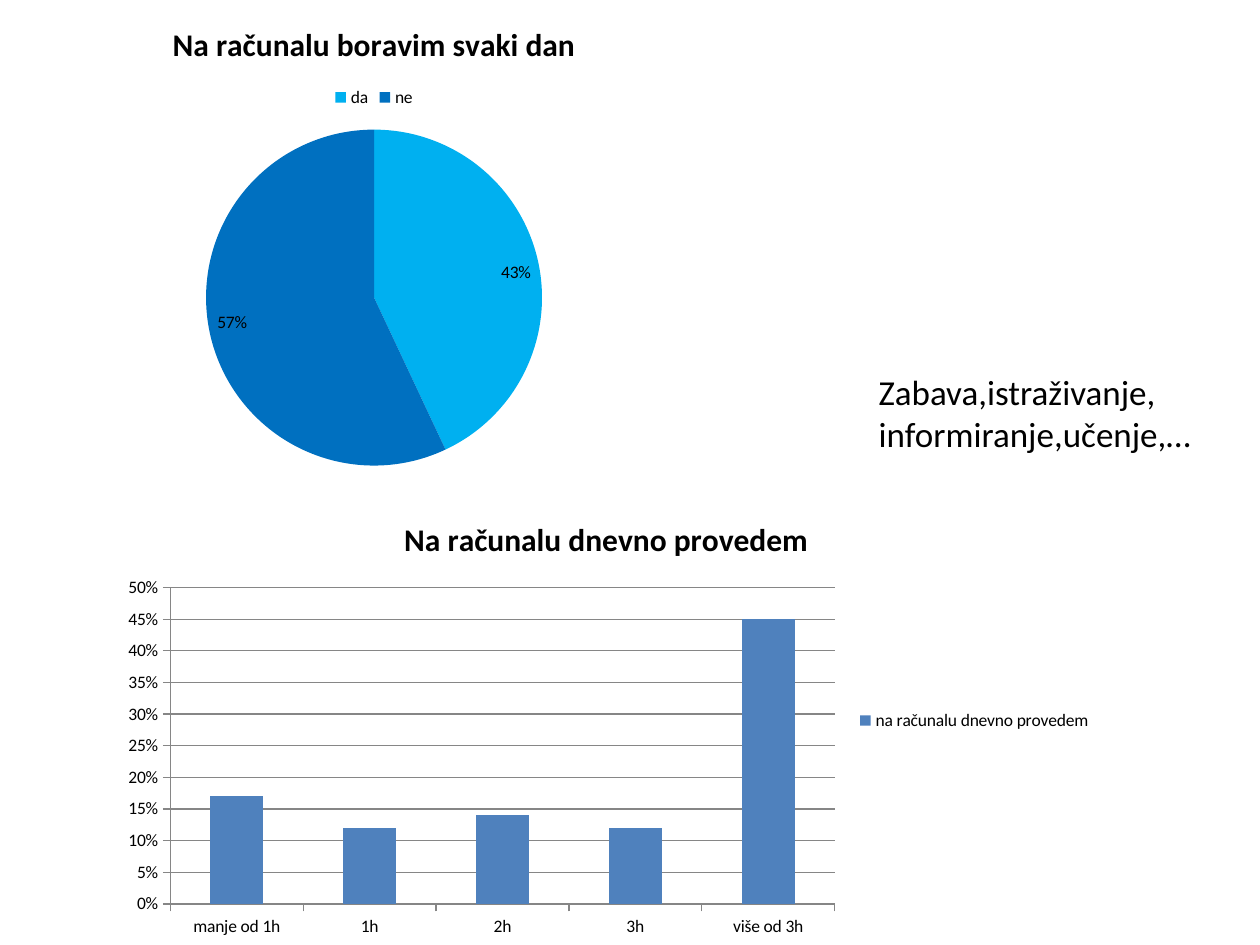
from pptx import Presentation
from pptx import util as u
from pptx.chart import data as chart_data
from pptx.dml import color
from pptx.enum import chart as kinds, text


def rgb(value):
    """Turn a hex string into a colour."""
    return color.RGBColor.from_string(value)


def assign(target, values):
    """Set every attribute named in a dict of format values."""
    for name, value in values.items():
        setattr(target, name, value)


class SlideBuilder:
    """Hold the style and the current slide, and add elements to it."""

    font = "Calibri"
    ink = "000000"
    rule = "868686"

    def __init__(self, page):
        """Keep the slide that receives the elements."""
        self.page = page

    def style(self, font, size, **values):
        """Apply the shared typeface and colour to a font."""
        assign(font, {"name": self.font, "size": u.Pt(size), **values})
        font.color.rgb = rgb(self.ink)

    def text(self, lines, bounds, size):
        """Add a text box with one paragraph for each line."""
        box = self.page.shapes.add_textbox(*map(u.Pt, bounds))
        frame = box.text_frame
        assign(frame, {"word_wrap": True, "auto_size": text.MSO_AUTO_SIZE.SHAPE_TO_FIT_TEXT})
        for index, line in enumerate(lines):
            para = frame.add_paragraph() if index else frame.paragraphs[0]
            span = para.add_run()
            span.text = line
            self.style(span.font, size)

    def chart(self, kind, title, series_name, points, bounds, legend, number_format):
        """Add a titled chart with one series and a legend."""
        source = chart_data.CategoryChartData(number_format=number_format)
        source.categories = list(points)
        source.add_series(series_name, list(points.values()))
        chart = self.page.shapes.add_chart(kind, *map(u.Pt, bounds), source).chart
        self.style(chart.font, 10)
        assign(chart, {"has_title": True, "has_legend": True})
        assign(chart.legend, {"position": legend, "include_in_layout": False})
        span = chart.chart_title.text_frame.paragraphs[0].add_run()
        span.text = title
        self.style(span.font, 18, bold=True)
        return chart

    def pie(self, title, points, bounds, fills):
        """Add a pie chart with percentage labels."""
        chart = self.chart(kinds.XL_CHART_TYPE.PIE, title, title, points, bounds,
                           kinds.XL_LEGEND_POSITION.TOP, "General")
        plot = chart.plots[0]
        assign(plot, {"vary_by_categories": True, "has_data_labels": True})
        assign(plot.data_labels, {
            "show_percentage": True, "show_value": False, "number_format": "0%",
            "number_format_is_linked": False,
            "position": kinds.XL_LABEL_POSITION.INSIDE_END})
        for index, value in enumerate(fills):
            fill = plot.series[0].points[index].format.fill
            fill.solid()
            fill.fore_color.rgb = rgb(value)

    def columns(self, title, series_name, points, bounds, value):
        """Add a column chart with a percentage axis and gridlines."""
        chart = self.chart(kinds.XL_CHART_TYPE.COLUMN_CLUSTERED, title, series_name, points,
                           bounds, kinds.XL_LEGEND_POSITION.RIGHT, "0%")
        assign(chart.plots[0], {"vary_by_categories": False, "gap_width": 150})
        fill = chart.plots[0].series[0].format.fill
        fill.solid()
        fill.fore_color.rgb = rgb(value)
        assign(chart.value_axis, {"minimum_scale": 0, "maximum_scale": 0.5,
                                  "major_unit": 0.05, "has_major_gridlines": True})
        assign(chart.value_axis.tick_labels, {"number_format": "0%",
                                              "number_format_is_linked": False})
        for axis in (chart.category_axis, chart.value_axis):
            axis.major_tick_mark = kinds.XL_TICK_MARK.OUTSIDE
        for part in (chart.category_axis, chart.value_axis, chart.value_axis.major_gridlines):
            part.format.line.width = u.Pt(0.75)
            part.format.line.color.rgb = rgb(self.rule)


def main():
    """Build the survey slide and save it."""
    deck = Presentation()
    assign(deck, {"slide_width": u.Pt(720), "slide_height": u.Pt(540)})
    builder = SlideBuilder(deck.slides.add_slide(deck.slide_layouts[6]))
    builder.pie("Na računalu boravim svaki dan", {"da": 43, "ne": 57},
                (22.5, 0, 382.5, 276), ("00B0F0", "0070C0"))
    hours = {"manje od 1h": 0.17, "1h": 0.12, "2h": 0.14, "3h": 0.12, "više od 3h": 0.45}
    builder.columns("Na računalu dnevno provedem", "na računalu dnevno provedem", hours,
                    (62, 283.5, 569, 256.5), "4F81BD")
    builder.text(("Zabava,istraživanje,", "informiranje,učenje,…"), (495, 208, 202.5, 55.5), 20)
    deck.save("out.pptx")


if __name__ == "__main__":
    main()
